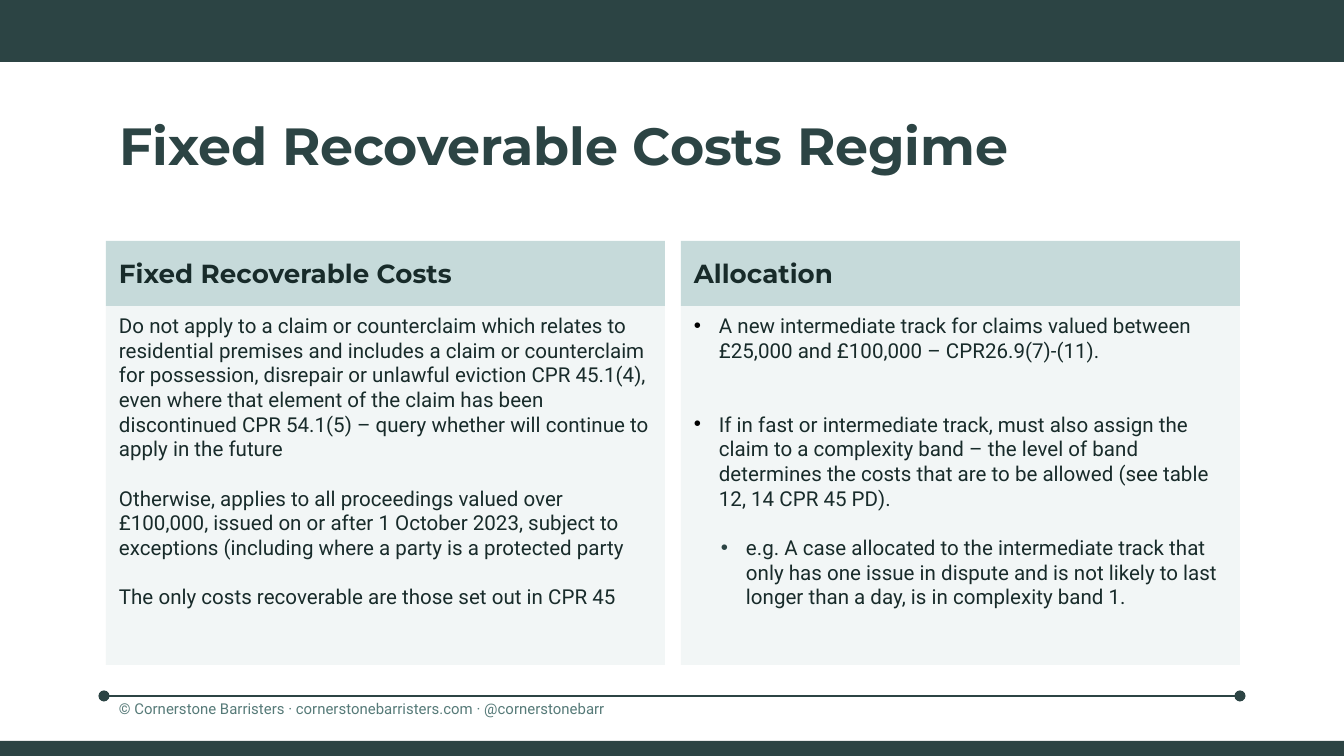
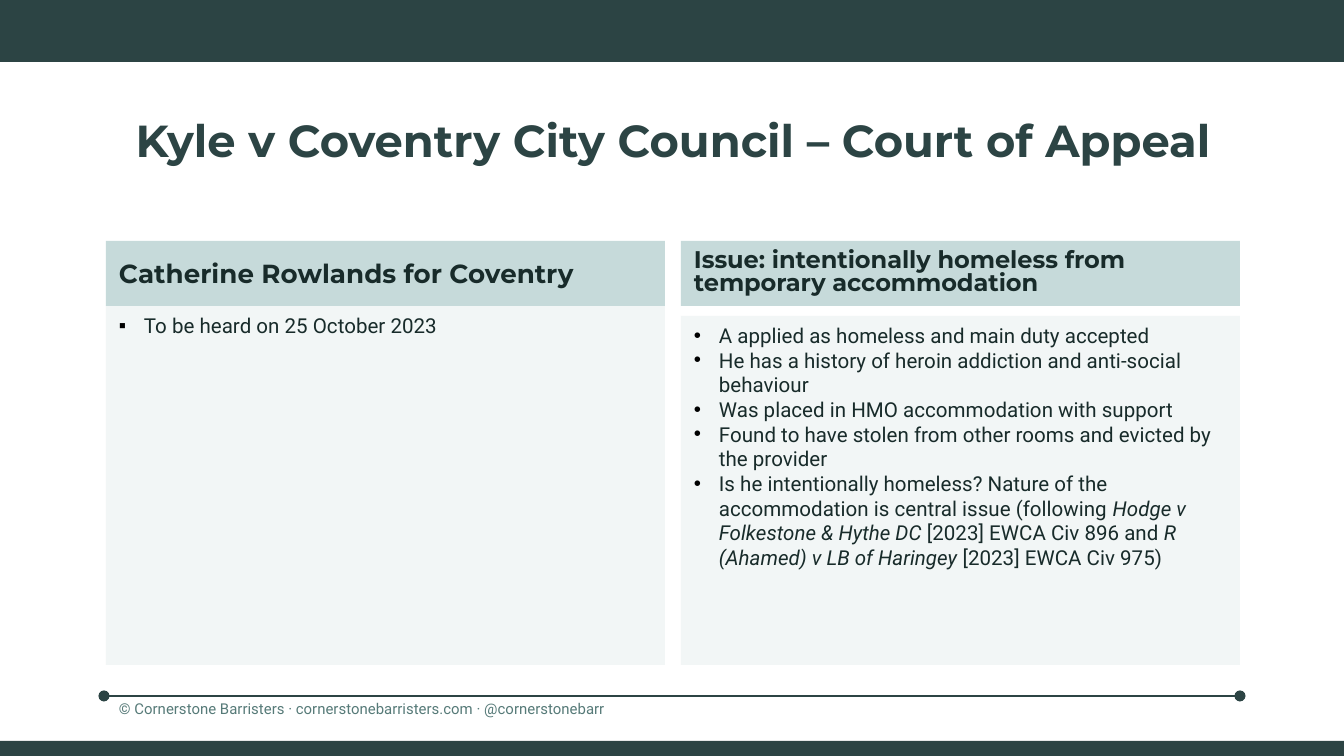
from dataclasses import dataclass

from lxml.etree import SubElement
from pptx import Presentation
from pptx.dml.color import RGBColor as Rgb
from pptx.enum.shapes import MSO_CONNECTOR as Connector, MSO_SHAPE as Preset
from pptx.enum.text import MSO_ANCHOR as Anchor, PP_ALIGN as Align
from pptx.oxml.ns import qn
from pptx.util import Emu, Pt

SLIDE_WIDTH, SLIDE_HEIGHT = 1344, 756
EMU_PER_PX = 9144000 / SLIDE_WIDTH


@dataclass(frozen=True)
class Theme:
    dark: str = "2C4444"
    ink: str = "182B2A"
    muted: str = "567A78"
    header_fill: str = "C6DADA"
    body_fill: str = "F2F6F6"
    bullet: str = "000000"
    heading_font: str = "Montserrat"
    body_font: str = "Roboto"
    title_size: float = 28
    header_size: float = 14
    body_size: float = 11
    footer_size: float = 8
    blank_line: float = 13.2


THEME = Theme()

# Two-column grid
LEFT, COLUMN_WIDTH, GUTTER = 106, 559, 16
CONTENT_WIDTH = 2 * COLUMN_WIDTH + GUTTER
HEADER_TOP, HEADER_HEIGHT = 241, 65
BODY_TOP, BODY_BOTTOM = HEADER_TOP + HEADER_HEIGHT, 665
INSET_X, INSET_Y = 13, 7
BULLET_INDENT, SECOND_LEVEL_INDENT = 25, 52

FOOTER = "© Cornerstone Barristers · cornerstonebarristers.com · @cornerstonebarr"


@dataclass(frozen=True)
class Item:
    """One paragraph: runs are (text, italic) pairs, gap counts lines before it."""
    runs: tuple
    bullet: str = ""
    level: int = 0
    gap: int = 0


def item(text, **options):
    return Item(((text, False),), **options)


def px(length):
    return Emu(round(length * EMU_PER_PX))


def box(*lengths):
    return [px(length) for length in lengths]


# Basic elements
def add_rect(slide, left, top, width, height, fill):
    shape = slide.shapes.add_shape(Preset.RECTANGLE, *box(left, top, width, height))
    shape.shadow.inherit = False
    shape.fill.solid()
    shape.fill.fore_color.rgb = Rgb.from_string(fill)
    shape.line.fill.background()
    return shape


def prepare_frame(shape, anchor=Anchor.TOP, inset_y=INSET_Y):
    frame = shape.text_frame
    frame.word_wrap = True
    frame.vertical_anchor = anchor
    frame.margin_left = frame.margin_right = px(INSET_X)
    frame.margin_top = frame.margin_bottom = px(inset_y)
    paragraph = frame.paragraphs[0]
    paragraph.alignment = Align.LEFT
    return paragraph


def add_run(paragraph, text, font, size, color, bold=False, italic=False):
    run = paragraph.add_run()
    run.text = text
    run.font.name = font
    run.font.size = Pt(size)
    run.font.bold = bold
    run.font.italic = italic
    run.font.color.rgb = Rgb.from_string(color)


def set_bullet(paragraph, character, level):
    properties = paragraph._p.get_or_add_pPr()
    indent = SECOND_LEVEL_INDENT if level else BULLET_INDENT
    properties.set("marL", str(px(indent)))
    properties.set("indent", str(px(-BULLET_INDENT)))
    color = SubElement(properties, qn("a:buClr"))
    SubElement(color, qn("a:srgbClr"), val=THEME.dark if level else THEME.bullet)
    SubElement(properties, qn("a:buFont"), typeface="Arial")
    SubElement(properties, qn("a:buChar"), char=character)


# Shared slide frame
def add_footer_rule(slide, left, right, y):
    rule = slide.shapes.add_connector(Connector.STRAIGHT, *box(left, y, right, y))
    rule.line.color.rgb = Rgb.from_string(THEME.dark)
    rule.line.width = Pt(0.75)
    line = rule.line._get_or_add_ln()
    for end in ("a:headEnd", "a:tailEnd"):
        SubElement(line, qn(end), type="oval")
    SubElement(rule._element.spPr, qn("a:effectLst"))


def add_frame(presentation):
    slide = presentation.slides.add_slide(presentation.slide_layouts[6])
    add_footer_rule(slide, 104, 1240, 696)
    add_rect(slide, 0, 0, SLIDE_WIDTH, 62, THEME.dark)
    footer = slide.shapes.add_textbox(*box(LEFT, 691, 665, 42))
    paragraph = prepare_frame(footer, inset_y=13)
    add_run(paragraph, FOOTER, THEME.body_font, THEME.footer_size, THEME.muted)
    add_rect(slide, 0, 741, SLIDE_WIDTH, 15, THEME.dark)
    return slide


def add_title(slide, text, size=THEME.title_size, alignment=Align.LEFT):
    title = slide.shapes.add_textbox(*box(LEFT, 106, CONTENT_WIDTH, 78))
    paragraph = prepare_frame(title)
    paragraph.alignment = alignment
    add_run(paragraph, text, THEME.heading_font, size, THEME.dark, bold=True)


# Column: heading band over a text panel
def add_column(slide, index, heading, items, body_top=BODY_TOP,
               heading_size=THEME.header_size, heading_spacing=1.0):
    left = LEFT + index * (COLUMN_WIDTH + GUTTER)
    body = add_rect(slide, left, body_top, COLUMN_WIDTH, BODY_BOTTOM - body_top,
                    THEME.body_fill)
    paragraph = prepare_frame(body)
    for position, entry in enumerate(items):
        if position:
            paragraph = body.text_frame.add_paragraph()
            paragraph.alignment = Align.LEFT
            paragraph.space_before = Pt(entry.gap * THEME.blank_line)
        paragraph.level = entry.level
        if entry.bullet:
            set_bullet(paragraph, entry.bullet, entry.level)
        for text, italic in entry.runs:
            add_run(paragraph, text, THEME.body_font, THEME.body_size, THEME.ink,
                    italic=italic)

    header = add_rect(slide, left, HEADER_TOP, COLUMN_WIDTH, HEADER_HEIGHT,
                      THEME.header_fill)
    paragraph = prepare_frame(header, Anchor.MIDDLE)
    paragraph.line_spacing = heading_spacing
    add_run(paragraph, heading, THEME.heading_font, heading_size, THEME.ink, bold=True)


# Slides
def build_costs_slide(presentation):
    slide = add_frame(presentation)
    add_title(slide, "Fixed Recoverable Costs Regime")
    add_column(slide, 0, "Fixed Recoverable Costs", [
        item("Do not apply to a claim or counterclaim which relates to residential "
             "premises and includes a claim or counterclaim for possession, disrepair "
             "or unlawful eviction CPR 45.1(4), even where that element of the claim "
             "has been discontinued CPR 54.1(5) – query whether will continue to "
             "apply in the future"),
        item("Otherwise, applies to all proceedings valued over £100,000, issued on "
             "or after 1 October 2023, subject to exceptions (including where a party "
             "is a protected party", gap=1),
        item("The only costs recoverable are those set out in CPR 45", gap=1),
    ])
    add_column(slide, 1, "Allocation", [
        item("A new intermediate track for claims valued between £25,000 and "
             "£100,000 – CPR26.9(7)-(11).", bullet="•"),
        item("If in fast or intermediate track, must also assign the claim to a "
             "complexity band – the level of band determines the costs that are to "
             "be allowed (see table 12, 14 CPR 45 PD).", bullet="•", gap=2),
        item("e.g. A case allocated to the intermediate track that only has one issue "
             "in dispute and is not likely to last longer than a day, is in "
             "complexity band 1.", bullet="•", level=1, gap=1),
    ])


def build_appeal_slide(presentation):
    slide = add_frame(presentation)
    add_title(slide, "Kyle v Coventry City Council – Court of Appeal", 24, Align.CENTER)
    add_column(slide, 0, "Catherine Rowlands for Coventry",
               [item("To be heard on 25 October 2023", bullet="▪")])
    facts = [
        "A applied as homeless and main duty accepted",
        "He has a history of heroin addiction and anti-social behaviour",
        "Was placed in HMO accommodation with support",
        "Found to have stolen from other rooms and evicted by the provider",
    ]
    question = Item((
        ("Is he intentionally homeless? Nature of the accommodation is central issue "
         "(following ", False),
        ("Hodge v Folkestone & Hythe DC ", True),
        ("[2023] EWCA Civ 896 and ", False),
        ("R (Ahamed) v LB of Haringey ", True),
        ("[2023] EWCA Civ 975)", False),
    ), bullet="•")
    add_column(slide, 1, "Issue: intentionally homeless from temporary accommodation",
               [item(fact, bullet="•") for fact in facts] + [question],
               body_top=BODY_TOP + 10, heading_size=12.9, heading_spacing=0.8)


def main():
    presentation = Presentation()
    presentation.slide_width = px(SLIDE_WIDTH)
    presentation.slide_height = px(SLIDE_HEIGHT)
    build_costs_slide(presentation)
    build_appeal_slide(presentation)
    presentation.save("out.pptx")


if __name__ == "__main__":
    main()
